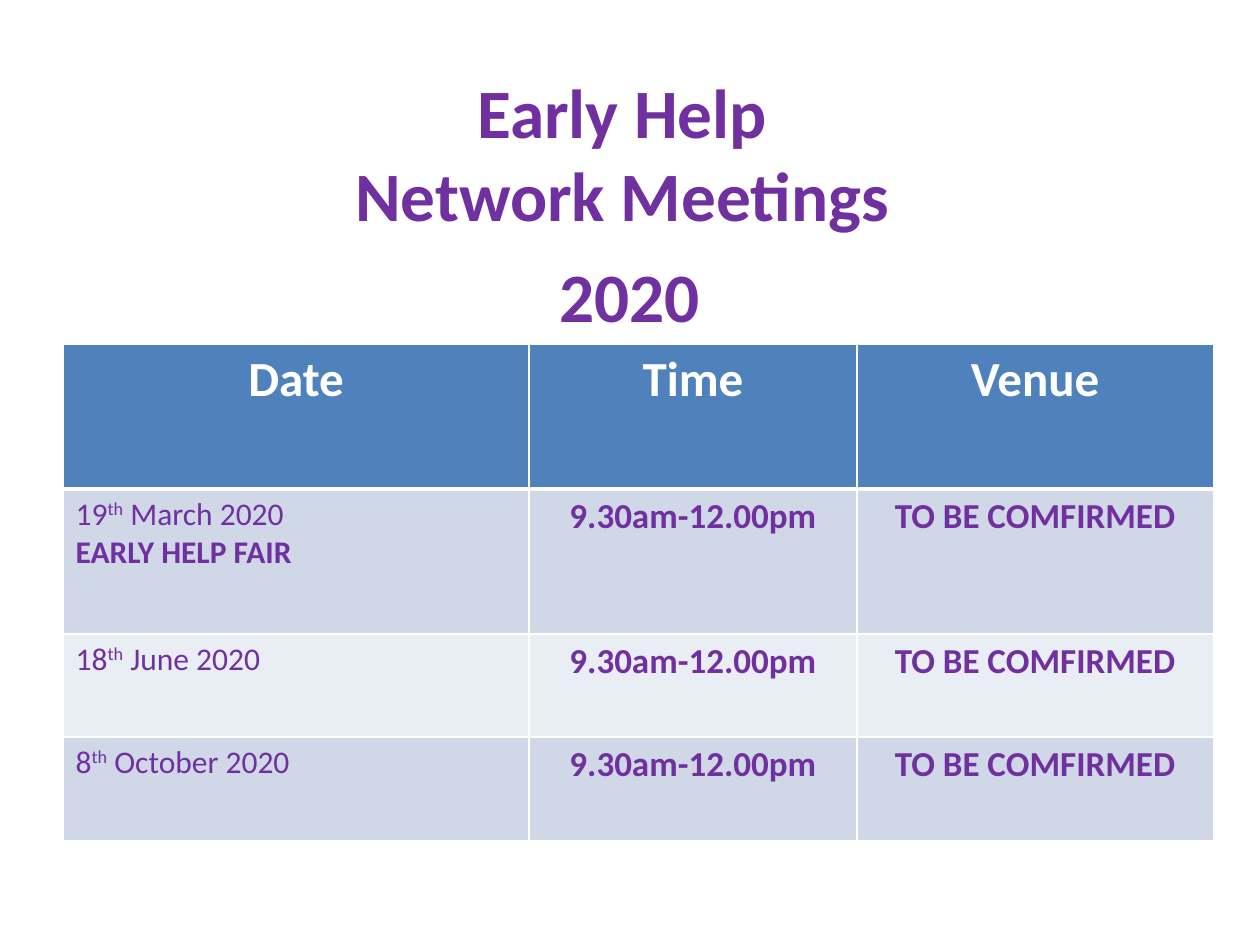
from lxml import etree
from pptx import Presentation
from pptx.dml.color import RGBColor
from pptx.enum.text import MSO_ANCHOR, PP_ALIGN
from pptx.oxml.ns import qn
from pptx.util import Inches, Pt

CENTER, LEFT = PP_ALIGN.CENTER, PP_ALIGN.LEFT
TOP = MSO_ANCHOR.TOP
PURPLE, WHITE, HEADER_BLUE = "7030A0", "FFFFFF", "4F81BD"
BANDS = ["D0D8E8", "E9EDF4"]


def add_run(paragraph, text, size, color=PURPLE, bold=True, superscript=False):
    run = paragraph.add_run()
    run.text = text
    run.font.name = "Calibri"
    run.font.size = Pt(size)
    run.font.bold = bold
    run.font.color.rgb = RGBColor.from_string(color)
    if superscript:
        run.font._element.set("baseline", "30000")


def style_cell(cell, fill, widths):
    """Set white borders, given in points by side, and then the fill."""
    properties = cell._tc.get_or_add_tcPr()
    for side, width in widths.items():
        line = etree.SubElement(properties, qn(f"a:ln{side}"), w=str(Pt(width)))
        solid = etree.SubElement(line, qn("a:solidFill"))
        etree.SubElement(solid, qn("a:srgbClr"), val=WHITE)
    cell.fill.solid()
    cell.fill.fore_color.rgb = RGBColor.from_string(fill)


presentation = Presentation()
presentation.slide_width = Inches(10)
presentation.slide_height = Inches(7.5)
slide = presentation.slides.add_slide(presentation.slide_layouts[6])

# Title
title = slide.shapes.add_textbox(Inches(0.5), Inches(0.3), Inches(9), Inches(2.43))
title_frame = title.text_frame
title_frame.word_wrap = True
title_frame.vertical_anchor = TOP
title_frame.margin_top = Inches(0.25)
title_frame.margin_bottom = 0
for index, line_text in enumerate(["Early Help ", "Network Meetings ", "2020"]):
    paragraph = title_frame.paragraphs[0] if index == 0 else title_frame.add_paragraph()
    paragraph.alignment = CENTER
    add_run(paragraph, line_text, 39.6)
paragraph.space_before = Pt(10)

# Meetings table
headings = ["Date", "Time", "Venue"]
meetings = [
    ("19", " March 2020", "EARLY HELP FAIR"),
    ("18", " June 2020", None),
    ("8", " October 2020", None),
]
column_widths = [3.7, 2.6, 2.83]
row_heights = [1.15, 1.15, 0.82, 0.82]

table = slide.shapes.add_table(
    len(row_heights), len(column_widths), Inches(0.5), Inches(2.73),
    Inches(sum(column_widths)), Inches(sum(row_heights)),
).table
for column, width in zip(table.columns, column_widths):
    column.width = Inches(width)
for row, height in zip(table.rows, row_heights):
    row.height = Inches(height)

for column_index, heading in enumerate(headings):
    cell = table.cell(0, column_index)
    style_cell(cell, HEADER_BLUE, {"L": 1, "R": 1, "T": 1, "B": 3})
    paragraph = cell.text_frame.paragraphs[0]
    paragraph.alignment = CENTER
    add_run(paragraph, heading, 28, WHITE)

for row_index, (day, month, event) in enumerate(meetings, start=1):
    top_width = 3 if row_index == 1 else 1
    cells = table.rows[row_index].cells
    for cell in cells:
        style_cell(cell, BANDS[(row_index - 1) % 2],
                   {"L": 1, "R": 1, "T": top_width, "B": 1})

    date_frame = cells[0].text_frame
    paragraph = date_frame.paragraphs[0]
    paragraph.alignment = LEFT
    add_run(paragraph, day, 18, bold=False)
    add_run(paragraph, "th", 18, bold=False, superscript=True)
    add_run(paragraph, month, 18, bold=False)
    if event:
        add_run(date_frame.add_paragraph(), event, 18)

    for column_index, text in enumerate(["9.30am-12.00pm", "TO BE COMFIRMED"], start=1):
        paragraph = cells[column_index].text_frame.paragraphs[0]
        paragraph.alignment = CENTER
        add_run(paragraph, text, 20)

presentation.save("out.pptx")
